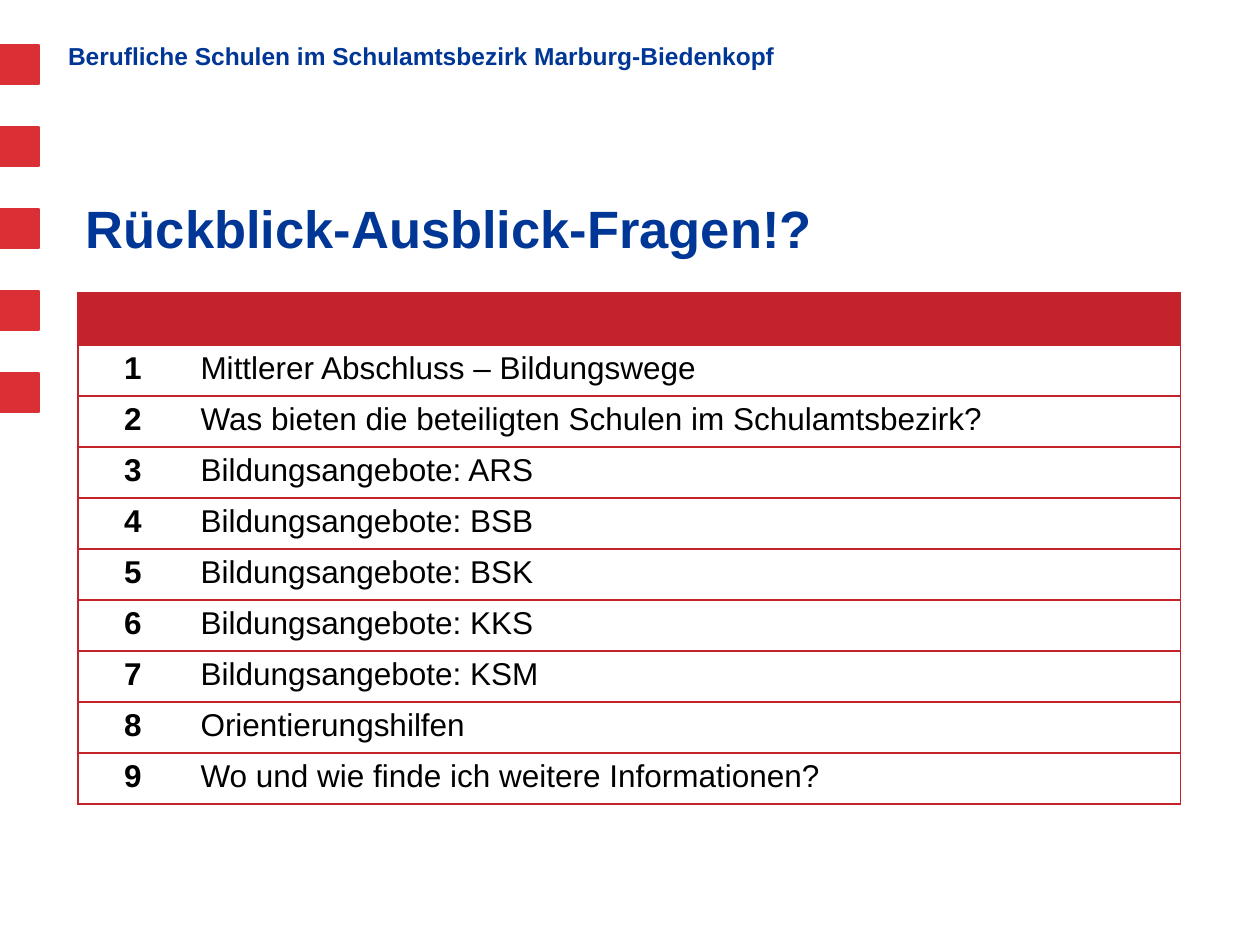
from dataclasses import dataclass
from typing import Any

from lxml.etree import SubElement
from pptx import Presentation
from pptx.dml.color import RGBColor
from pptx.enum.shapes import MSO_SHAPE
from pptx.enum.text import MSO_ANCHOR, PP_ALIGN
from pptx.oxml.ns import qn
from pptx.util import Emu, Pt

EMU_PER_PX = 914400 / 126


def px(length: int) -> Emu:
    return Emu(round(length * EMU_PER_PX))


@dataclass(frozen=True)
class Theme:
    font: str = "Arial"
    blue: RGBColor = RGBColor(0x00, 0x36, 0x95)
    black: RGBColor = RGBColor(0, 0, 0)
    square_red: RGBColor = RGBColor(0xDB, 0x2F, 0x36)
    table_red: RGBColor = RGBColor(0xC5, 0x23, 0x2B)
    rule_width: float = 0.75
    banner_size: int = 14
    title_size: int = 30
    agenda_size: int = 18


@dataclass(frozen=True)
class Box:
    left: int
    top: int
    width: int
    height: int

    def emu(self) -> tuple[Emu, ...]:
        return tuple(px(v) for v in (self.left, self.top, self.width, self.height))


@dataclass(frozen=True)
class Heading:
    text: str
    box: Box
    size: int
    anchor: MSO_ANCHOR
    side_inset: int
    edge_inset: int
    line_spacing: float


THEME = Theme()

SQUARE_COUNT, SQUARE_PITCH = 5, 82
FIRST_SQUARE = Box(0, 45, 39, 39)

HEADINGS = (
    Heading("Berufliche Schulen im Schulamtsbezirk Marburg-Biedenkopf",
            Box(68, 38, 1012, 39), THEME.banner_size, MSO_ANCHOR.TOP, 0, 6, 0.9),
    Heading("Rückblick-Ausblick-Fragen!?",
            Box(73, 123, 1162, 136), THEME.title_size, MSO_ANCHOR.BOTTOM, 13, 0, 1.0),
)

AGENDA = (
    "Mittlerer Abschluss – Bildungswege",
    "Was bieten die beteiligten Schulen im Schulamtsbezirk?",
    *(f"Bildungsangebote: {school}" for school in ("ARS", "BSB", "BSK", "KKS", "KSM")),
    "Orientierungshilfen",
    "Wo und wie finde ich weitere Informationen?",
)
TABLE_LEFT, TABLE_TOP = 78, 293
NUMBER_WIDTH, TOPIC_WIDTH = 110, 993
HEADER_HEIGHT, ROW_HEIGHT = 52, 51


def apply(target: Any, values: dict[str, Any]) -> None:
    for name, value in values.items():
        setattr(target, name, value)


def style_font(font: Any, size: int, color: RGBColor, bold: bool) -> None:
    apply(font, {"name": THEME.font, "size": Pt(size), "bold": bold})
    font.color.rgb = color


def draw_square(slide: Any, box: Box) -> None:
    square = slide.shapes.add_shape(MSO_SHAPE.RECTANGLE, *box.emu())
    square.shadow.inherit = False
    square.fill.solid()
    square.fill.fore_color.rgb = THEME.square_red
    square.line.color.rgb = THEME.square_red
    square.line.width = Pt(THEME.rule_width)


def draw_heading(slide: Any, heading: Heading) -> None:
    frame = slide.shapes.add_textbox(*heading.box.emu()).text_frame
    side, edge = px(heading.side_inset), px(heading.edge_inset)
    apply(frame, {
        "word_wrap": True, "vertical_anchor": heading.anchor,
        "margin_left": side, "margin_right": side,
        "margin_top": edge, "margin_bottom": edge,
    })
    paragraph = frame.paragraphs[0]
    apply(paragraph, {"text": heading.text, "line_spacing": heading.line_spacing})
    style_font(paragraph.runs[0].font, heading.size, THEME.blue, True)


def draw_borders(cell: Any, visible: str) -> None:
    """Rule the sides named in visible and clear the others."""
    properties = cell._tc.get_or_add_tcPr()
    for position, side in enumerate("LRTB"):
        border = SubElement(properties, qn(f"a:ln{side}"), w=str(Pt(THEME.rule_width)))
        if side in visible:
            fill = SubElement(border, qn("a:solidFill"))
            SubElement(fill, qn("a:srgbClr"), val=str(THEME.table_red))
        else:
            SubElement(border, qn("a:noFill"))
        properties.insert(position, border)  # borders come before the cell fill


def write_cell(cell: Any, text: str, align: PP_ALIGN, bold: bool) -> None:
    paragraph = cell.text_frame.paragraphs[0]
    apply(paragraph, {"text": text, "alignment": align})
    style_font(paragraph.runs[0].font, THEME.agenda_size, THEME.black, bold)


def draw_agenda(slide: Any) -> None:
    box = Box(TABLE_LEFT, TABLE_TOP, NUMBER_WIDTH + TOPIC_WIDTH,
              HEADER_HEIGHT + ROW_HEIGHT * len(AGENDA))
    agenda = slide.shapes.add_table(len(AGENDA) + 1, 2, *box.emu()).table
    apply(agenda, {"first_row": False, "horz_banding": False})
    for column, width in zip(agenda.columns, (NUMBER_WIDTH, TOPIC_WIDTH)):
        column.width = px(width)

    # Solid header band, open rows below
    for index, row in enumerate(agenda.rows):
        row.height = px(ROW_HEIGHT if index else HEADER_HEIGHT)
        for cell, outer_side in zip(row.cells, "LR"):
            if index:
                cell.fill.background()
            else:
                cell.fill.solid()
                cell.fill.fore_color.rgb = THEME.table_red
            draw_borders(cell, outer_side + "TB")

    # Numbered topics
    for number, topic in enumerate(AGENDA, start=1):
        write_cell(agenda.cell(number, 0), str(number), PP_ALIGN.CENTER, True)
        write_cell(agenda.cell(number, 1), topic, PP_ALIGN.LEFT, False)


def main() -> None:
    deck = Presentation()
    apply(deck, {"slide_width": px(1260), "slide_height": px(945)})
    slide = deck.slides.add_slide(deck.slide_layouts[6])

    # Red squares along the left edge
    first = FIRST_SQUARE
    for step in range(SQUARE_COUNT):
        draw_square(slide, Box(first.left, first.top + step * SQUARE_PITCH,
                               first.width, first.height))

    # Banner and title
    for heading in HEADINGS:
        draw_heading(slide, heading)

    # Agenda table
    draw_agenda(slide)
    deck.save("out.pptx")


if __name__ == "__main__":
    main()
